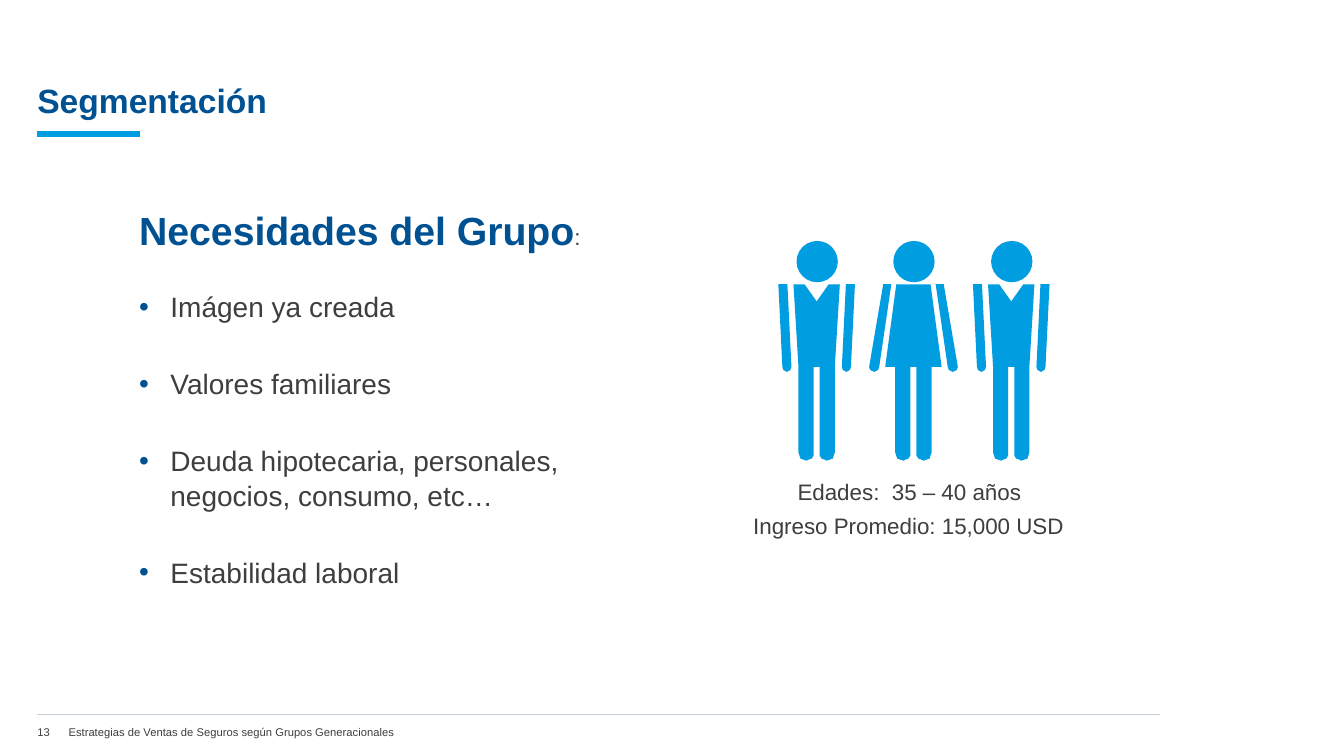
from lxml import etree
from pptx import Presentation
from pptx.dml.color import RGBColor
from pptx.enum.shapes import MSO_CONNECTOR, MSO_SHAPE
from pptx.enum.text import MSO_ANCHOR, MSO_AUTO_SIZE
from pptx.oxml.ns import qn
from pptx.util import Inches, Pt

LINE = MSO_CONNECTOR.STRAIGHT
OVAL = MSO_SHAPE.OVAL
TOP, MIDDLE, BOTTOM = MSO_ANCHOR.TOP, MSO_ANCHOR.MIDDLE, MSO_ANCHOR.BOTTOM
NO_FIT = MSO_AUTO_SIZE.NONE
COLORS = {"navy": "005192", "sky": "009EE0", "gray": "3E3E3E", "rule": "C6D2D9"}
FONT = "Arial"

LEG = [(0.18, 3.64), (0.18, 4.49), (0.17, 4.52), (0.16, 4.55), (0.13, 4.56), (0.1, 4.57),
       (0.08, 4.56), (0.05, 4.55), (0.03, 4.52), (0.03, 4.49), (0.03, 3.64)]
MAN = {"body": [(0, 2.99), (0.12, 2.82), (0.23, 2.82)], "arm": (0.29, 0.38, 0.25, 0.34)}
WOMAN = {"body": [(0.17, 2.82), (0.28, 3.64)], "arm": (0.22, 0.3, 0.34, 0.44)}
GROUP = [(8.1, MAN), (9.06, WOMAN), (10.03, MAN)]
NEEDS = ["Imágen ya creada", "Valores familiares",
         "Deuda hipotecaria, personales, negocios, consumo, etc…", "Estabilidad laboral"]


def color(name):
    return RGBColor.from_string(COLORS[name])


def mirror(points):
    return [(-x, y) for x, y in reversed(points)]


class Page:
    def __init__(self, deck):
        self.slide = deck.slides.add_slide(deck.slide_layouts[5])
        self.shapes = self.slide.shapes

    def style(self, run, size, tone="gray", bold=False):
        run.font.name = FONT
        run.font.size = Pt(size)
        run.font.bold = bold
        run.font.color.rgb = color(tone)

    def frame(self, shape, box, anchor, foot=0):
        shape.left, shape.top, shape.width, shape.height = map(Inches, box)
        frame = shape.text_frame
        frame.word_wrap = True
        frame.auto_size = NO_FIT
        frame.vertical_anchor = anchor
        frame.margin_left = frame.margin_right = frame.margin_top = 0
        frame.margin_bottom = Inches(foot)
        return frame

    def title(self, text, box):
        frame = self.frame(self.shapes.title, box, BOTTOM, 0.04)
        frame.text = text
        para = frame.paragraphs[0]
        para.alignment = 1
        self.style(para.runs[0], 24, "navy", True)

    def text(self, text, box, size, anchor=TOP):
        frame = self.frame(self.shapes.add_textbox(0, 0, 0, 0), box, anchor)
        frame.text = text
        self.style(frame.paragraphs[0].runs[0], size)

    def needs(self, head, items, box):
        frame = self.frame(self.shapes.add_textbox(0, 0, 0, 0), box, TOP)
        para = frame.paragraphs[0]
        para.line_spacing = 1.04
        for text, size, tone, bold in [(head, 28, "navy", True), (":", 16, "gray", False)]:
            run = para.add_run()
            run.text = text
            self.style(run, size, tone, bold)
        for index, item in enumerate(items):
            para = frame.add_paragraph()
            para.text = item
            para.line_spacing = 1.04
            para.space_before = Pt(30 if index else 25)
            self.bullet(para)
            self.style(para.runs[0], 20)

    def bullet(self, para):
        props = para._p.get_or_add_pPr()
        props.set("marL", str(Inches(0.31)))
        props.set("indent", str(-Inches(0.31)))
        tint = etree.SubElement(props, qn("a:buClr"))
        etree.SubElement(tint, qn("a:srgbClr"), val=COLORS["navy"])
        etree.SubElement(props, qn("a:buFont"), typeface=FONT)
        etree.SubElement(props, qn("a:buChar"), char="•")

    def line(self, left, right, top, tone, width):
        line = self.shapes.add_connector(LINE, *map(Inches, (left, top, right, top)))
        line.line.color.rgb = color(tone)
        line.line.width = Pt(width)
        etree.SubElement(line._element.spPr, qn("a:effectLst"))

    def paint(self, shape):
        shape.shadow.inherit = False
        shape.fill.solid()
        shape.fill.fore_color.rgb = color("sky")
        shape.line.fill.background()

    def outline(self, points, mid):
        spots = [(Inches(mid + x), Inches(y)) for x, y in points]
        pen = self.shapes.build_freeform(*spots[0])
        pen.add_line_segments(spots[1:], close=True)
        self.paint(pen.convert_to_shape())

    def person(self, mid, kind):
        half = kind["body"] + LEG
        self.outline(half + mirror(half), mid)
        top_in, top_out, low_in, low_out = kind["arm"]
        arm = [(top_in, 2.82), (low_in, 3.64), (low_in + 0.01, 3.67),
               ((low_in + low_out) / 2, 3.69), (low_out - 0.01, 3.67),
               (low_out, 3.64), (top_out, 2.82)]
        for side in (arm, mirror(arm)):
            self.outline(side, mid)
        self.paint(self.shapes.add_shape(OVAL, Inches(mid - 0.2), Inches(2.39),
                                         Inches(0.41), Inches(0.41)))


def main():
    deck = Presentation()
    deck.slide_width, deck.slide_height = Inches(13.33), Inches(7.5)
    page = Page(deck)
    page.line(0.37, 1.39, 1.33, "sky", 4.5)
    page.line(0.37, 11.51, 7.09, "rule", 0.75)
    page.text("13", (0.37, 7.14, 0.31, 0.24), 8, MIDDLE)
    page.text("Estrategias de Ventas de Seguros según Grupos Generacionales",
              (0.68, 7.14, 10.78, 0.24), 8, MIDDLE)
    page.title("Segmentación", (0.37, 0.36, 12.59, 0.87))
    page.needs("Necesidades del Grupo", NEEDS, (1.38, 2.03, 4.49, 4.55))
    for mid, kind in GROUP:
        page.person(mid, kind)
    page.text("Edades:  35 – 40 años", (7.91, 4.74, 2.29, 0.28), 16)
    page.text("Ingreso Promedio: 15,000 USD", (7.47, 5.08, 3.18, 0.28), 16)
    deck.save("out.pptx")


if __name__ == "__main__":
    main()
